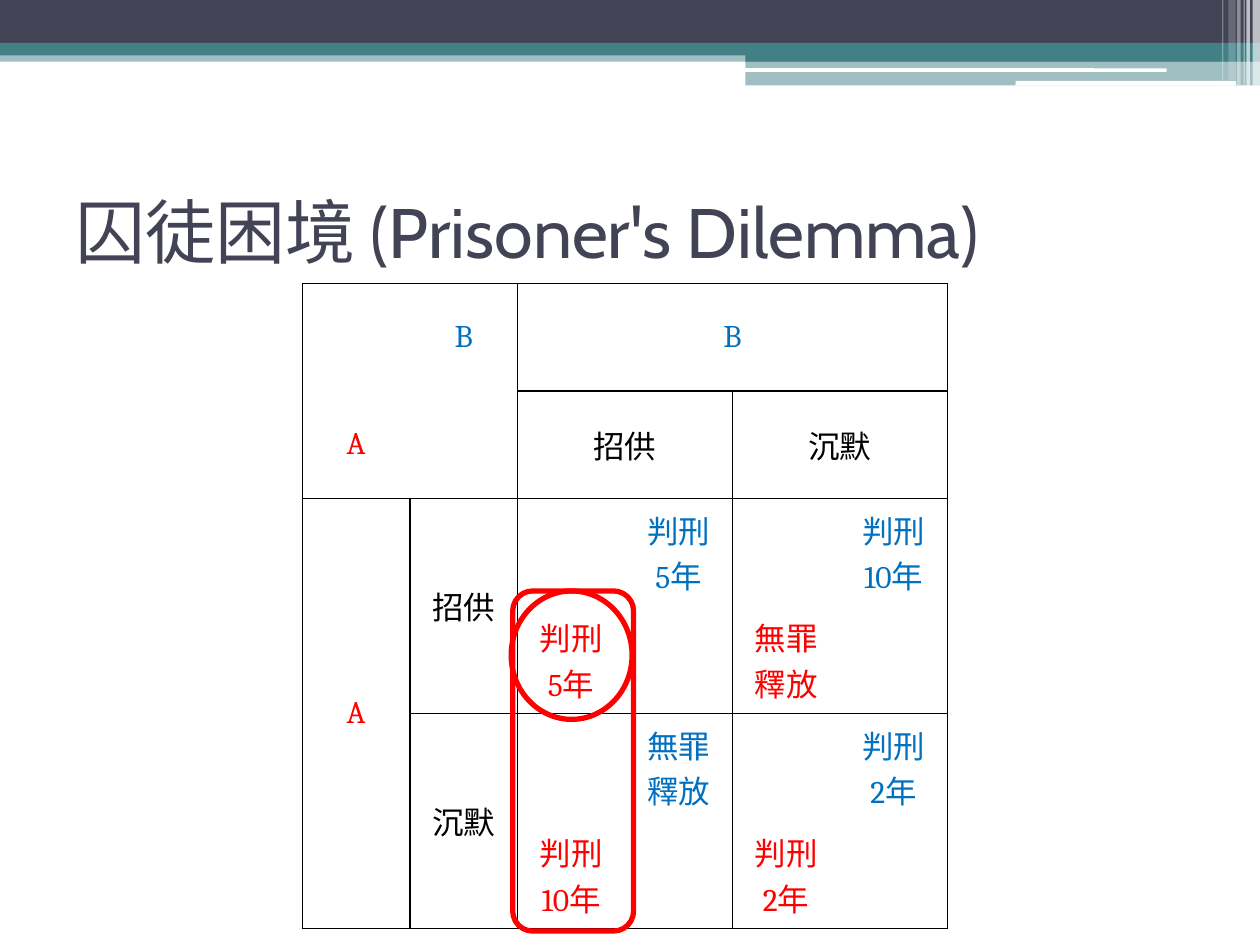
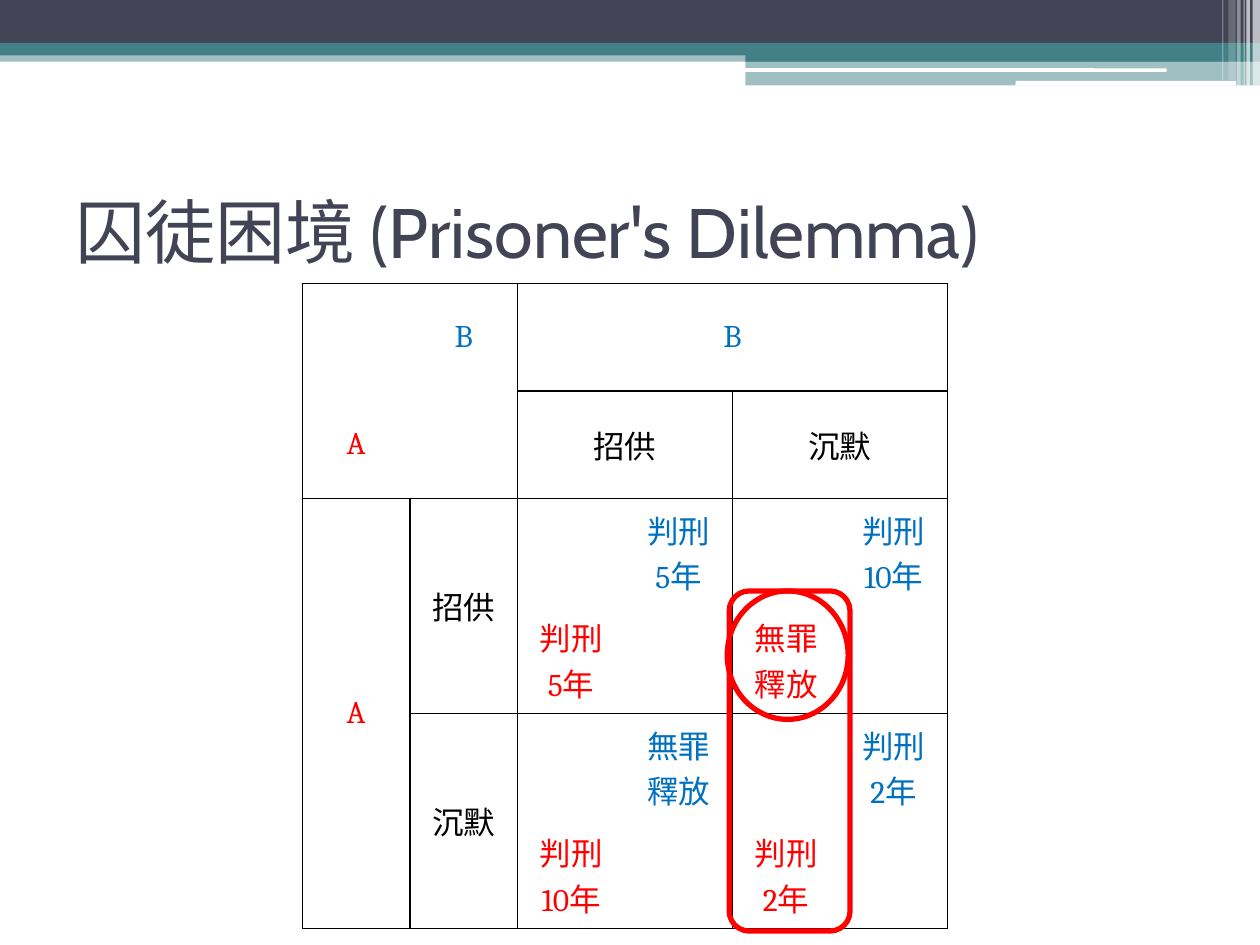
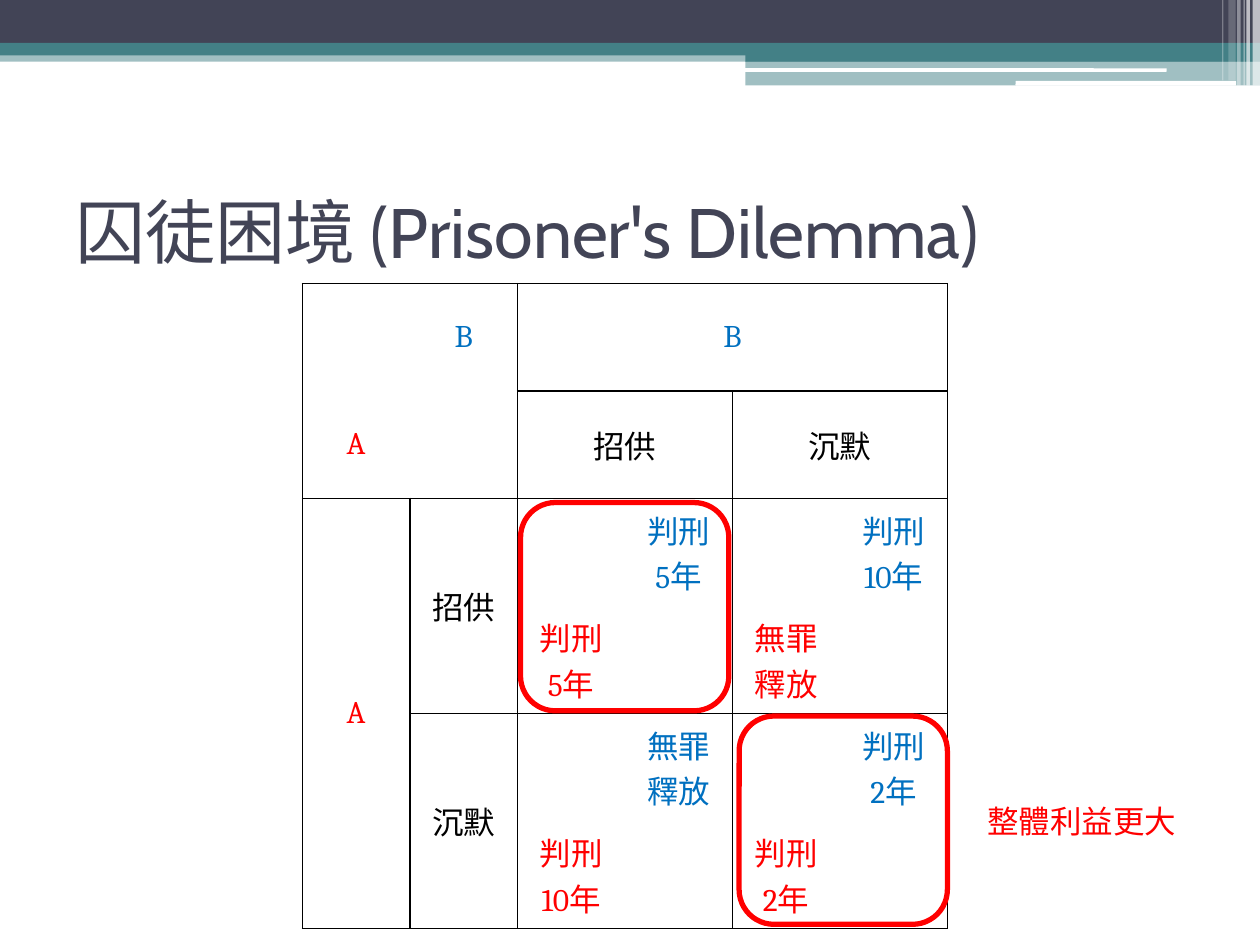
from pptx import Presentation
from pptx.dml.color import RGBColor
from pptx.enum.shapes import MSO_SHAPE as Preset
from pptx.enum.text import MSO_ANCHOR as Anchor, PP_ALIGN as Align
from pptx.oxml.ns import qn
from pptx.util import Pt
from lxml.etree import SubElement, Element

INK = RGBColor(0x42, 0x44, 0x56)
TEAL = RGBColor(0x43, 0x80, 0x86)
WHITE = RGBColor(0xFF, 0xFF, 0xFF)
BLACK = RGBColor(0x00, 0x00, 0x00)
BLUE = RGBColor(0x00, 0x70, 0xC0)
RED = RGBColor(0xFF, 0x00, 0x00)
TITLE_FONT, BODY_FONT = "Cabin", "Cambria"

TITLE = "囚徒困境 (Prisoner's Dilemma)"

# Header decoration: preset, (left, top, width, height), colour, opacity in percent
BANDS = [
    (Preset.RECTANGLE, (0, 28.8, 720, 6.48), TEAL, 50),
    (Preset.RECTANGLE, (0, 0, 720, 24.48), INK, 100),
    (Preset.RECTANGLE, (0, 24.48, 720, 7.2), TEAL, 100),
    (Preset.RECTANGLE, (426, 28, 294, 7.2), TEAL, 100),
    (Preset.RECTANGLE, (426, 34.8, 294, 14), TEAL, 50),
    (Preset.ROUNDED_RECTANGLE, (425.5, 39, 241.2, 2), WHITE, 100),
    (Preset.ROUNDED_RECTANGLE, (580.3, 46.2, 126, 2.7), WHITE, 100),
]
# Vertical stripes: left, width, height, opacity in percent
STRIPES = [
    (715.8, 4.2, 49, 65), (712.2, 2, 49, 65), (710.6, 0.72, 49, 60),
    (707, 2, 49, 40), (702, 4.2, 46, 20), (698.4, 0.72, 46, 30),
]
BANDS += [(Preset.RECTANGLE, (left, 0, width, height), WHITE, opacity)
          for left, width, height, opacity in STRIPES]

# Payoff matrix: a grid of 6 x 6 square cells
GRID_LEFT, GRID_TOP, CELL, GRID_COUNT = 172.8, 162, 61.44, 6
# Merged headings: row, column, rows, columns, text, colour
HEADINGS = [
    (0, 2, 1, 4, "B", BLUE),
    (1, 2, 1, 2, "招供", BLACK),
    (1, 4, 1, 2, "沉默", BLACK),
    (2, 0, 4, 1, "A", RED),
    (2, 1, 2, 1, "招供", BLACK),
    (4, 1, 2, 1, "沉默", BLACK),
]
# 2 x 2 blocks: row, column, text for B (top right), text for A (bottom left)
OUTCOMES = [
    (0, 0, "B", "A"),
    (2, 2, "判刑\n5年", "判刑\n5年"),
    (2, 4, "判刑\n10年", "無罪\n釋放"),
    (4, 2, "無罪\n釋放", "判刑\n10年"),
    (4, 4, "判刑\n2年", "判刑\n2年"),
]

# Red marks and the note of each slide
SLIDES = [
    {"marks": [(Preset.ROUNDED_RECTANGLE, (293, 337.7, 69.1, 194.4)),
               (Preset.OVAL, (292.1, 337.7, 69.1, 73.4))]},
    {"marks": [(Preset.ROUNDED_RECTANGLE, (416.7, 337.7, 69.1, 194.4)),
               (Preset.OVAL, (415.6, 337.7, 69.1, 73.4))]},
    {"marks": [(Preset.ROUNDED_RECTANGLE, (297.5, 287.2, 119, 119)),
               (Preset.ROUNDED_RECTANGLE, (422.4, 409.2, 119, 119))],
     "note": ("整體利益更大", (553, 454.5, 130.3, 29))},
]


def write(frame, text, size=18, font=BODY_FONT, color=BLACK, align=Align.CENTER):
    for index, line in enumerate(text.split("\n")):
        paragraph = frame.add_paragraph() if index else frame.paragraphs[0]
        paragraph.alignment = align
        run = paragraph.add_run()
        run.text = line
        run.font.size = Pt(size)
        run.font.name = font
        run.font.color.rgb = color


def add_text(slide, box, text, anchor=Anchor.TOP, **style):
    frame = slide.shapes.add_textbox(*map(Pt, box)).text_frame
    frame.word_wrap = True
    frame.vertical_anchor = anchor
    write(frame, text, **style)


def add_shape(slide, preset, box, fill=None, opacity=100, line=None):
    shape = slide.shapes.add_shape(preset, *map(Pt, box))
    shape.shadow.inherit = False
    if fill is None:
        shape.fill.background()
    else:
        shape.fill.solid()
        shape.fill.fore_color.rgb = fill
        if opacity < 100:
            color = next(shape._element.spPr.iter(qn("a:srgbClr")))
            SubElement(color, qn("a:alpha"), val=str(opacity * 1000))
    if line is None:
        shape.line.fill.background()
    else:
        shape.line.color.rgb = line
        shape.line.width = Pt(3)


def set_borders(cell, shown):
    """Draw the edges named in shown (letters of LRTB) and hide the others."""
    properties = cell._tc.get_or_add_tcPr()
    for index, side in enumerate("LRTB"):
        edge = Element(qn("a:ln" + side), w=str(Pt(1)))
        if side in shown:
            fill = SubElement(edge, qn("a:solidFill"))
            SubElement(fill, qn("a:srgbClr"), val=str(BLACK))
        else:
            SubElement(edge, qn("a:noFill"))
        properties.insert(index, edge)


def fill_cell(cell, text, color):
    cell.vertical_anchor = Anchor.MIDDLE
    write(cell.text_frame, text, color=color)


def add_matrix(slide):
    side = Pt(CELL * GRID_COUNT)
    table = slide.shapes.add_table(GRID_COUNT, GRID_COUNT, Pt(GRID_LEFT),
                                   Pt(GRID_TOP), side, side).table
    table.first_row = table.horz_banding = False
    for line in table.columns:
        line.width = Pt(CELL)
    for line in table.rows:
        line.height = Pt(CELL)
    for cell in table.iter_cells():
        cell.fill.background()

    # Headings span several cells with a full outline
    for row, column, rows, columns, text, color in HEADINGS:
        for r in range(row, row + rows):
            for c in range(column, column + columns):
                set_borders(table.cell(r, c), "LRTB")
        first = table.cell(row, column)
        first.merge(table.cell(row + rows - 1, column + columns - 1))
        fill_cell(first, text, color)

    # Outcome blocks keep four cells and show only the outer edges
    for row, column, text_b, text_a in OUTCOMES:
        for r, vertical in enumerate("TB"):
            for c, horizontal in enumerate("LR"):
                set_borders(table.cell(row + r, column + c), vertical + horizontal)
        fill_cell(table.cell(row, column + 1), text_b, BLUE)
        fill_cell(table.cell(row + 1, column), text_a, RED)


def main():
    presentation = Presentation()
    presentation.slide_width, presentation.slide_height = Pt(720), Pt(540)
    for content in SLIDES:
        slide = presentation.slides.add_slide(presentation.slide_layouts[6])
        for preset, box, color, opacity in BANDS:
            add_shape(slide, preset, box, fill=color, opacity=opacity)
        add_text(slide, (36, 90, 648, 84), TITLE, anchor=Anchor.MIDDLE, size=40,
                 font=TITLE_FONT, color=INK, align=Align.LEFT)
        add_matrix(slide)
        for preset, box in content["marks"]:
            add_shape(slide, preset, box, line=RED)
        if "note" in content:
            text, box = content["note"]
            add_text(slide, box, text, color=RED)
    presentation.save("out.pptx")


if __name__ == "__main__":
    main()
